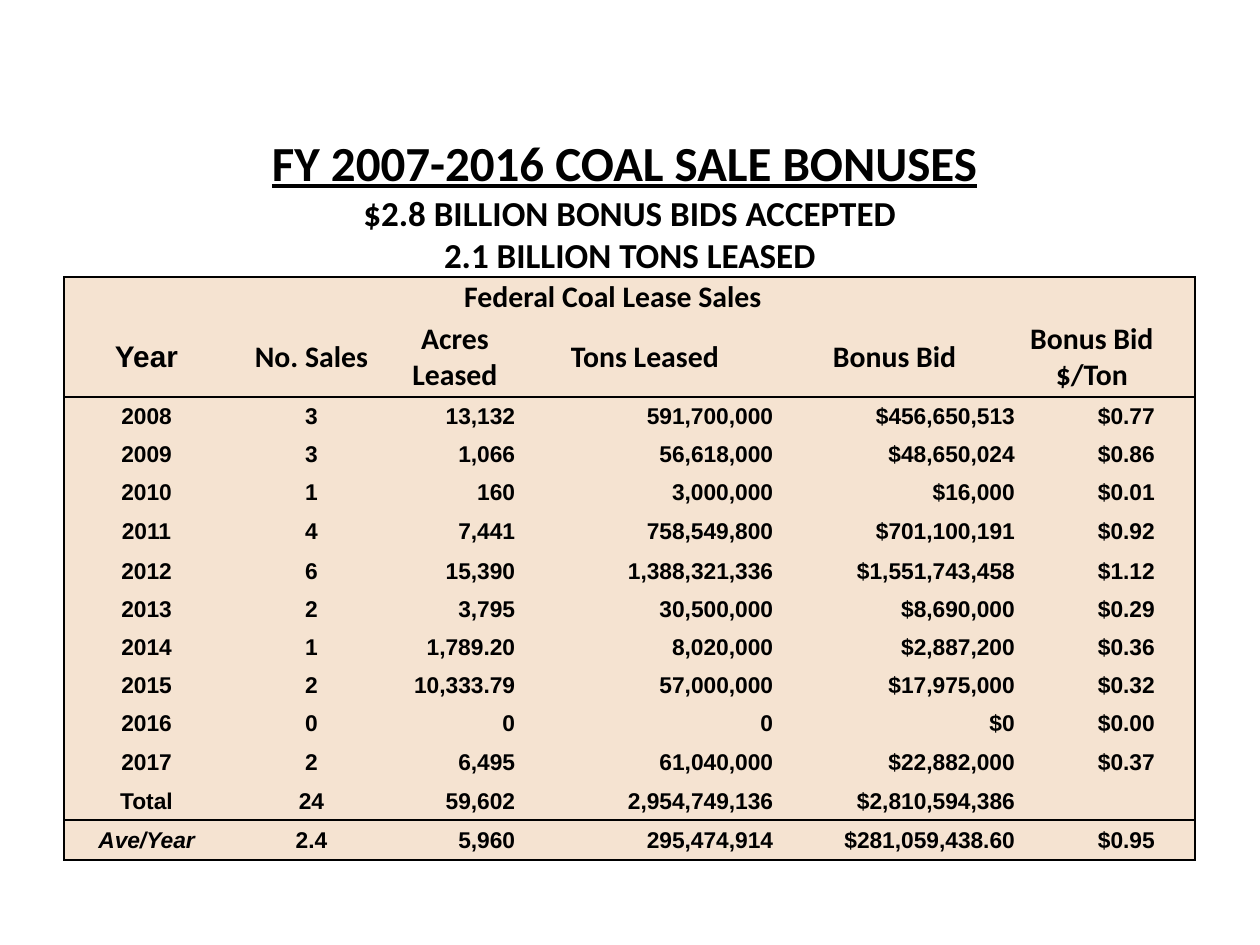
import dataclasses
import pptx
import pptx.dml.color
import pptx.enum.text
import pptx.oxml.ns
import pptx.util
from lxml import etree

ALIGN = pptx.enum.text.PP_ALIGN
ANCHOR = pptx.enum.text.MSO_ANCHOR


@dataclasses.dataclass(frozen=True)
class Theme:
    ink: str = "000000"
    sand: str = "F5E3D1"
    heading_font: str = "Calibri"
    body_font: str = "Arial"
    title_size: int = 28
    subtitle_size: int = 20
    header_size: int = 17
    body_size: int = 13
    border_width: int = 1


THEME = Theme()
EMU_PER_PX = 914400 / 126

TITLE = "FY 2007-2016 COAL SALE BONUSES"
SUBTITLES = ["$2.8 BILLION BONUS BIDS ACCEPTED", "2.1 BILLION TONS LEASED"]
TABLE_TITLE = "Federal Coal Lease Sales"
HEADERS = ["Year", "No. Sales", "Acres Leased", "Tons Leased", "Bonus Bid ", "Bonus Bid $/Ton"]
SALES = [
    ("2008", "3", "13,132", "591,700,000", "$456,650,513 ", "$0.77 "),
    ("2009", "3", "1,066", "56,618,000", "$48,650,024 ", "$0.86 "),
    ("2010", "1", "160", "3,000,000", "$16,000 ", "$0.01 "),
    ("2011", "4", "7,441", "758,549,800", "$701,100,191 ", "$0.92 "),
    ("2012", "6", "15,390", "1,388,321,336", "$1,551,743,458 ", "$1.12 "),
    ("2013", "2", "3,795", "30,500,000", "$8,690,000 ", "$0.29 "),
    ("2014", "1", "1,789.20", "8,020,000", "$2,887,200 ", "$0.36 "),
    ("2015", "2", "10,333.79", "57,000,000", "$17,975,000 ", "$0.32 "),
    ("2016", "0", "0", "0", "$0 ", "$0.00 "),
    ("2017", "2", "6,495", "61,040,000", "$22,882,000 ", "$0.37 "),
    ("Total", "24", "59,602", "2,954,749,136", "$2,810,594,386 ", ""),
    ("Ave/Year", "2.4", "5,960", "295,474,914", "$281,059,438.60 ", "$0.95 "),
]
ROWS = [[TABLE_TITLE], HEADERS, *SALES]
COLUMN_WIDTHS = [165, 165, 122, 258, 248, 140, 33]
ROW_HEIGHTS = [40, 80, 38, 38, 38, 41, 38, 38, 38, 38, 38, 40, 38, 40]
HEADER_ROW = 1
LAST_ROW = len(ROWS) - 1
LAST_COLUMN = len(COLUMN_WIDTHS) - 1
RULED_ROWS = (HEADER_ROW, LAST_ROW - 1, LAST_ROW)


def px(length):
    return pptx.util.Emu(round(length * EMU_PER_PX))


def write_text(paragraph, text, *, size, font=THEME.heading_font, align=ALIGN.CENTER,
               italic=False, underline=False):
    paragraph.alignment = align
    if not text:
        paragraph._p.get_or_add_endParaRPr().set("sz", str(size * 100))
        return
    run = paragraph.add_run()
    run.text = text
    run.font.name = font
    run.font.size = pptx.util.Pt(size)
    run.font.bold = True
    run.font.italic = italic
    run.font.underline = underline
    run.font.color.rgb = pptx.dml.color.RGBColor.from_string(THEME.ink)


def set_borders(cell, visible):
    properties = cell._tc.get_or_add_tcPr()
    for side in "LRTB":
        line = etree.SubElement(properties, pptx.oxml.ns.qn(f"a:ln{side}"))
        if side in visible:
            line.set("w", str(pptx.util.Pt(THEME.border_width)))
            fill = etree.SubElement(line, pptx.oxml.ns.qn("a:solidFill"))
            etree.SubElement(fill, pptx.oxml.ns.qn("a:srgbClr")).set("val", THEME.ink)
        else:
            etree.SubElement(line, pptx.oxml.ns.qn("a:noFill"))


def visible_borders(row, column):
    rules = {
        "L": column == 0,
        "R": column == LAST_COLUMN,
        "T": row == 0 or row - 1 in RULED_ROWS,
        "B": row in RULED_ROWS,
    }
    return {side for side, shown in rules.items() if shown}


def text_format(row, column):
    if row <= HEADER_ROW:
        is_year = row == HEADER_ROW and column == 0
        return {"size": THEME.header_size,
                "font": THEME.body_font if is_year else THEME.heading_font}
    return {"size": THEME.body_size, "font": THEME.body_font,
            "align": ALIGN.CENTER if column < 2 else ALIGN.RIGHT,
            "italic": row == LAST_ROW and column == 0}


def add_title(slide):
    frame = slide.shapes.add_textbox(0, px(126), px(1260), px(168)).text_frame
    frame.word_wrap = True
    frame.vertical_anchor = ANCHOR.TOP
    paragraph = frame.paragraphs[0]
    write_text(paragraph, TITLE, size=THEME.title_size, underline=True)
    write_text(paragraph, " ", size=THEME.title_size)
    for subtitle in SUBTITLES:
        paragraph.add_line_break()
        write_text(paragraph, subtitle, size=THEME.subtitle_size)


def add_sales_table(slide):
    table = slide.shapes.add_table(
        len(ROWS), len(COLUMN_WIDTHS), px(64), px(277),
        px(sum(COLUMN_WIDTHS)), px(sum(ROW_HEIGHTS))).table
    for column, width in zip(table.columns, COLUMN_WIDTHS):
        column.width = px(width)
    for row, height in zip(table.rows, ROW_HEIGHTS):
        row.height = px(height)
    for row, texts in enumerate(ROWS):
        for column in range(len(COLUMN_WIDTHS)):
            cell = table.cell(row, column)
            cell.margin_left = cell.margin_right = cell.margin_top = px(1)
            cell.margin_bottom = 0
            cell.vertical_anchor = ANCHOR.MIDDLE
            set_borders(cell, visible_borders(row, column))
            cell.fill.solid()
            cell.fill.fore_color.rgb = pptx.dml.color.RGBColor.from_string(THEME.sand)
            text = texts[column] if column < len(texts) else ""
            write_text(cell.text_frame.paragraphs[0], text, **text_format(row, column))
    table.cell(0, 0).merge(table.cell(0, LAST_COLUMN - 1))


def main():
    presentation = pptx.Presentation()
    presentation.slide_width = px(1260)
    presentation.slide_height = px(945)
    slide = presentation.slides.add_slide(presentation.slide_layouts[6])
    add_title(slide)
    add_sales_table(slide)
    presentation.save("out.pptx")


if __name__ == "__main__":
    main()
